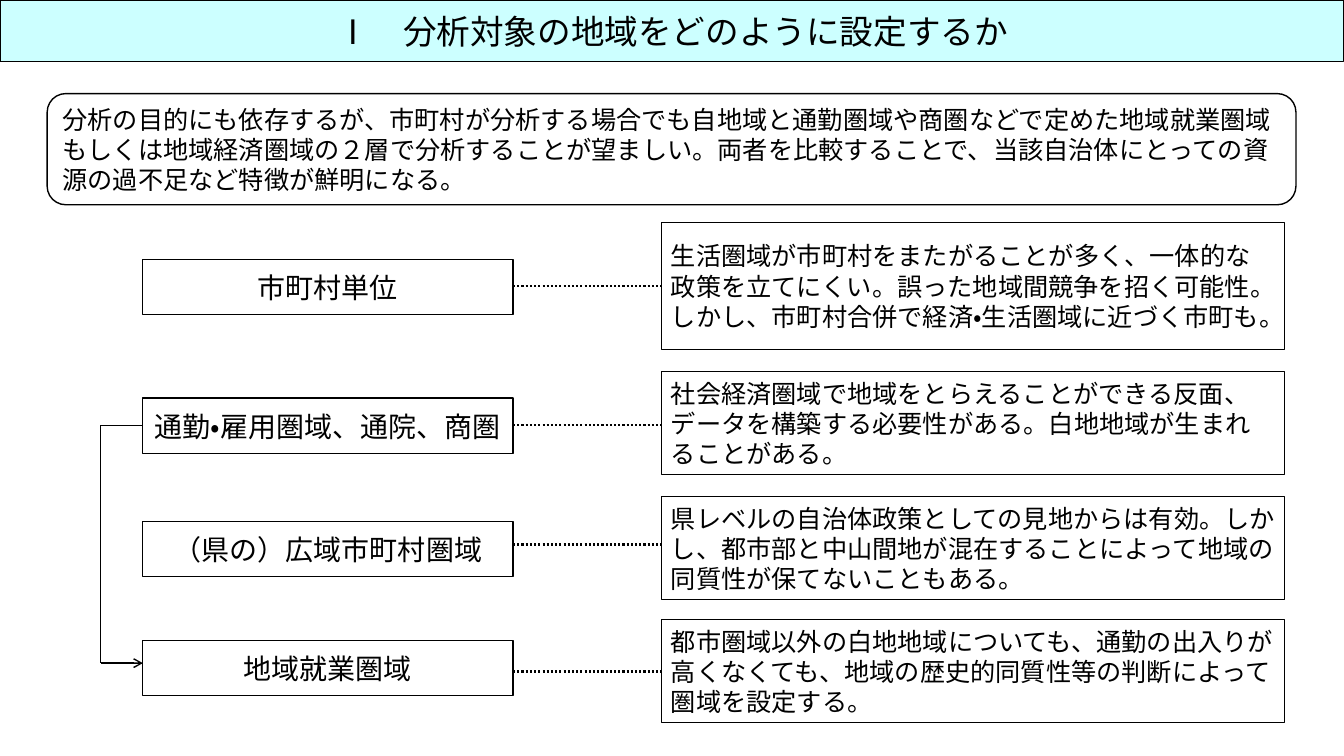
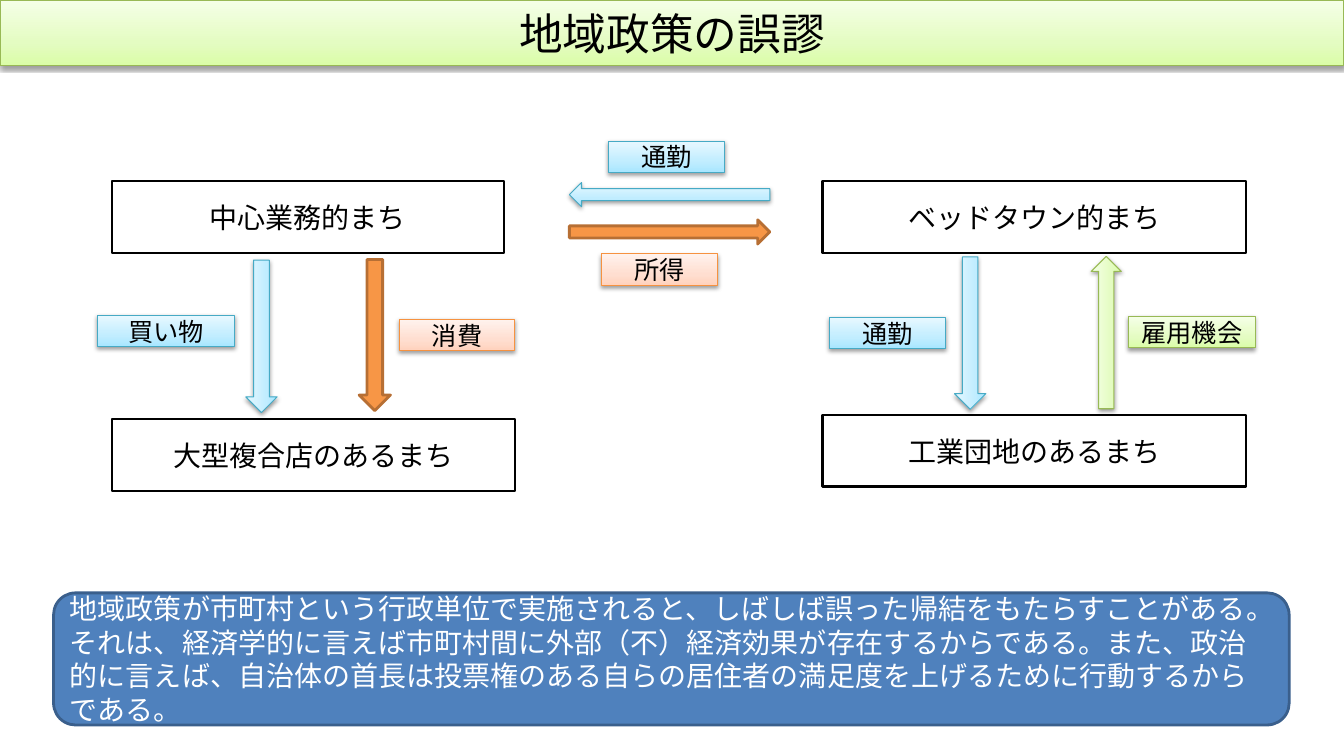
from copy import deepcopy
from itertools import pairwise

from lxml.etree import SubElement
from pptx import Presentation
from pptx.dml.color import RGBColor
from pptx.enum.dml import MSO_LINE
from pptx.enum.lang import MSO_LANGUAGE_ID
from pptx.enum.shapes import MSO_CONNECTOR, MSO_SHAPE
from pptx.enum.text import MSO_ANCHOR, MSO_AUTO_SIZE, PP_ALIGN
from pptx.oxml.ns import qn
from pptx.util import Cm, Pt

FONT = "Calibri"
BLACK, WHITE = "000000", "FFFFFF"
SLIDE_W, SLIDE_H = 33.87, 19.05
TITLE_ONLY = 5
STOPS = (0, 0.35, 1)
BLUE = (("A7E6FF", "C1EDFF", "E7F8FF"), "46AAC5", 0.75)
PINK = (("FFD2BD", "FFDED0", "FFF2ED"), "F69240", 0.75)
GREEN = (("DAFDA7", "E4FCC2", "F5FFE7"), "98B955", 0.75)
ORANGE = ("F79646", "B76F34", 2)
NAVY = ("4F81BD", "3A5F8C", 2)
CYAN = ("CCFFFF", BLACK, 0.75)
THIN_BOX = (None, BLACK, 0.75)
SUMMARY_BOX = (WHITE, BLACK, 1)
TOWN_BOX = (WHITE, BLACK, 1.5)


def set_color(fmt, color):
    """Give a colour format a hex colour."""
    fmt.rgb = RGBColor.from_string(color)


def set_gradient(fill, colors):
    """Fill with an upward gradient through the given colours."""
    fill.gradient()
    fill.gradient_angle = 90
    first = fill.gradient_stops[0]._gs
    first.addnext(deepcopy(first))
    for stop, position, color in zip(fill.gradient_stops, STOPS, colors):
        stop.position = position
        set_color(stop.color, color)


def add_soft_shadow(shape):
    """Add a soft shadow below a shape."""
    effects = shape._element.spPr.find(qn("a:effectLst"))
    shadow = SubElement(effects, qn("a:outerShdw"), blurRad="40000", dist="20000",
                        dir="5400000", rotWithShape="0")
    color = SubElement(shadow, qn("a:srgbClr"), val=BLACK)
    SubElement(color, qn("a:alpha"), val="38000")


def paint(shape, style):
    """Apply fill, outline and shadow to a shape."""
    fill, line, width = style
    shape.shadow.inherit = False
    if fill is None:
        shape.fill.background()
    elif isinstance(fill, tuple):
        set_gradient(shape.fill, fill)
        add_soft_shadow(shape)
    else:
        shape.fill.solid()
        set_color(shape.fill.fore_color, fill)
    set_color(shape.line.color, line)
    shape.line.width = Pt(width)


def write(shape, text, size, color=BLACK, align=PP_ALIGN.CENTER, wrap=True):
    """Put one formatted paragraph in a shape."""
    tf = shape.text_frame
    tf.text = text
    tf.word_wrap = wrap
    tf.auto_size = MSO_AUTO_SIZE.NONE
    tf.vertical_anchor = MSO_ANCHOR.MIDDLE
    p = tf.paragraphs[0]
    p.alignment = align
    p.font.name = FONT
    p.font.size = Pt(size)
    p.font.language_id = MSO_LANGUAGE_ID.JAPANESE
    set_color(p.font.color, color)


def add_title_slide(prs, text, height, size, style):
    """Add a slide with a full-width title band."""
    s = prs.slides.add_slide(prs.slide_layouts[TITLE_ONLY])
    title = s.shapes.title
    title.left, title.top = Cm(0), Cm(0)
    title.width, title.height = prs.slide_width, Cm(height)
    paint(title, style)
    write(title, text, size)
    return s


def add_shape(s, kind, box, style, rotation=0):
    """Add a painted preset shape; box is left, top, width, height in cm."""
    sp = s.shapes.add_shape(kind, *map(Cm, box))
    sp.rotation = rotation
    paint(sp, style)
    return sp


def add_box(s, box, text, size, style, **text_format):
    """Add a rectangle with text."""
    write(add_shape(s, MSO_SHAPE.RECTANGLE, box, style), text, size, **text_format)


def add_summary(s, box, text, size, style, color=BLACK):
    """Add a rounded box with left-aligned text."""
    sp = add_shape(s, MSO_SHAPE.ROUNDED_RECTANGLE, box, style)
    write(sp, text, size, color, PP_ALIGN.LEFT)


def add_line(s, start, end, width, dotted=False, arrow=False):
    """Add a straight black line between two points in cm."""
    line = s.shapes.add_connector(MSO_CONNECTOR.STRAIGHT, *map(Cm, start + end))
    set_color(line.line.color, BLACK)
    line.line.width = Pt(width)
    if dotted:
        line.line.dash_style = MSO_LINE.ROUND_DOT
    if arrow:
        SubElement(line.line._get_or_add_ln(), qn("a:tailEnd"), type="arrow")
    SubElement(line._element.spPr, qn("a:effectLst"))


def build_region_slide(prs):
    """Build the slide on choosing the region to analyse."""
    s = add_title_slide(prs, "Ⅰ　分析対象の地域をどのように設定するか", 1.55, 24, CYAN)
    add_summary(
        s, (1.19, 2.36, 31.47, 2.8),
        "分析の目的にも依存するが、市町村が分析する場合でも自地域と通勤圏域や商圏などで定めた"
        "地域就業圏域もしくは地域経済圏域の２層で分析することが望ましい。両者を比較することで、"
        "当該自治体にとっての資源の過不足など特徴が鮮明になる。", 18, SUMMARY_BOX)
    label_x, label_w, note_x, note_w = 3.6, 9.33, 16.66, 15.72
    rows = [
        (6.53, 7.21, 5.61, 3.2, "市町村単位",
         "生活圏域が市町村をまたがることが多く、一体的な政策を立てにくい。"
         "誤った地域間競争を招く可能性。しかし、市町村合併で経済・生活圏域に近づく市町も。"),
        (10.03, 10.72, 9.37, 2.59, "通勤・雇用圏域、通院、商圏",
         "社会経済圏域で地域をとらえることができる反面、データを構築する必要性がある。"
         "白地地域が生まれることがある。"),
        (13.13, 13.72, 12.52, 2.59, "（県の）広域市町村圏域",
         "県レベルの自治体政策としての見地からは有効。しかし、都市部と中山間地が混在する"
         "ことによって地域の同質性が保てないこともある。"),
        (16.13, 16.92, 15.62, 2.59, "地域就業圏域",
         "都市圏域以外の白地地域についても、通勤の出入りが高くなくても、"
         "地域の歴史的同質性等の判断によって圏域を設定する。"),
    ]
    for label_y, line_y, note_y, note_h, label, note in rows:
        add_box(s, (label_x, label_y, label_w, 1.4), label, 20, THIN_BOX, wrap=False)
        add_box(s, (note_x, note_y, note_w, note_h), note, 18, THIN_BOX,
                align=PP_ALIGN.LEFT)
        add_line(s, (label_x + label_w, line_y), (note_x, line_y), 1.5, dotted=True)
    bracket_x, bracket_top, bracket_bottom = 2.54, 10.72, 16.71
    corners = [(label_x, bracket_top), (bracket_x, bracket_top),
               (bracket_x, bracket_bottom), (label_x, bracket_bottom)]
    for start, end in pairwise(corners):
        add_line(s, start, end, 1, arrow=end == corners[-1])


def build_fallacy_slide(prs):
    """Build the slide on the fallacy of regional policy."""
    s = add_title_slide(prs, "地域政策の誤謬", 1.65, 31.2, GREEN)
    towns = [
        (2.82, 4.57, 9.88, "中心業務的まち"),
        (20.73, 4.57, 10.67, "ベッドタウン的まち"),
        (2.82, 10.57, 10.16, "大型複合店のあるまち"),
        (20.73, 10.46, 10.67, "工業団地のあるまち"),
    ]
    for x, y, w, name in towns:
        add_box(s, (x, y, w, 1.8), name, 20, TOWN_BOX)
    left, right = MSO_SHAPE.LEFT_ARROW, MSO_SHAPE.RIGHT_ARROW
    arrows = [
        (left, (14.35, 4.6, 5.05, 0.61), BLUE, 0),
        (right, (14.35, 5.54, 5.05, 0.61), ORANGE, 0),
        (left, (4.67, 8.08, 3.84, 0.79), BLUE, 270),
        (right, (7.54, 8.05, 3.81, 0.79), ORANGE, 90),
        (left, (22.53, 8, 3.84, 0.79), BLUE, 270),
        (right, (25.96, 8, 3.84, 0.76), GREEN, 270),
    ]
    for arrow in arrows:
        add_shape(s, *arrow)
    flows = [
        (15.34, 3.56, 2.92, "通勤", BLUE),
        (15.16, 6.4, 2.92, "所得", PINK),
        (2.46, 7.95, 3.45, "買い物", BLUE),
        (10.06, 8.05, 2.92, "消費", PINK),
        (20.9, 8, 2.92, "通勤", BLUE),
        (28.45, 7.98, 3.18, "雇用機会", GREEN),
    ]
    for x, y, w, name, style in flows:
        add_box(s, (x, y, w, 0.79), name, 18, style)
    add_summary(
        s, (1.35, 14.94, 31.14, 3.33),
        "地域政策が市町村という行政単位で実施されると、しばしば誤った帰結をもたらすことがある。"
        "それは、経済学的に言えば市町村間に外部（不）経済効果が存在するからである。"
        "また、政治的に言えば、自治体の首長は投票権のある自らの居住者の満足度を上げるために"
        "行動するからである。", 20, NAVY, WHITE)


def main():
    """Build and save the presentation."""
    prs = Presentation()
    prs.slide_width, prs.slide_height = Cm(SLIDE_W), Cm(SLIDE_H)
    build_region_slide(prs)
    build_fallacy_slide(prs)
    prs.save("out.pptx")


if __name__ == "__main__":
    main()
